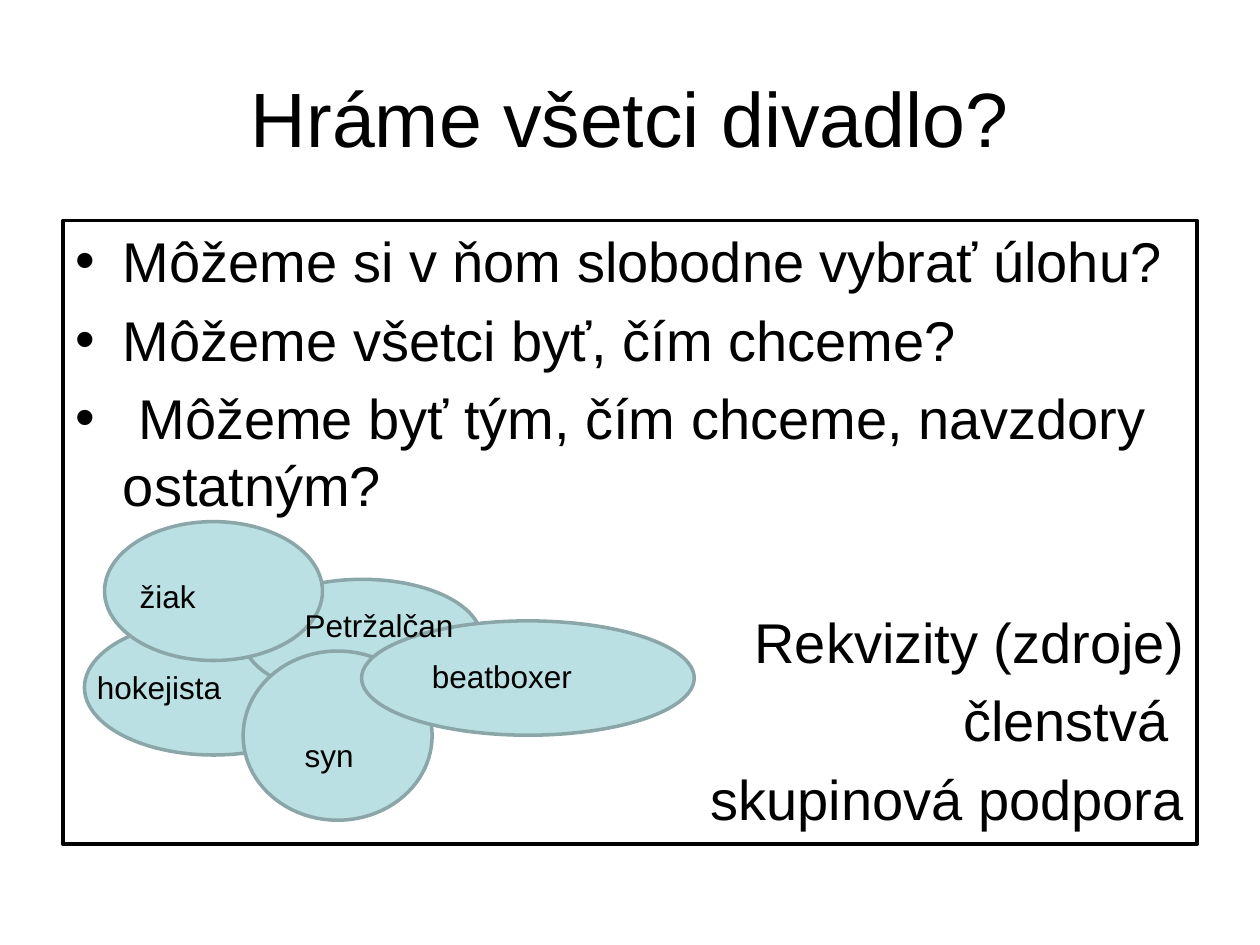
"""Build the slide on theatre roles: questions, overlapping roles and props."""
from lxml import etree
from pptx import Presentation
from pptx.dml.color import RGBColor
from pptx.enum import shapes, text
from pptx.oxml.ns import qn
from pptx.util import Inches, Pt

COLORS = {"ink": "000000", "role": "BBE0E3", "edge": "8AA6A8"}
FONT = "Arial"

prs = Presentation()
prs.slide_width, prs.slide_height = Inches(10), Inches(7.5)
W, H = prs.slide_width, prs.slide_height
s = prs.slides.add_slide(prs.slide_layouts[1])


def place(sp, x, y, w, h):
    sp.left, sp.top, sp.width, sp.height = int(W * x), int(H * y), int(W * w), int(H * h)


def add_run(p, words, size):
    r = p.add_run()
    r.text = words
    r.font.name, r.font.size = FONT, Pt(size)
    r.font.color.rgb = RGBColor.from_string(COLORS["ink"])


title, body = s.placeholders[0], s.placeholders[1]
place(title, 0.05, 0.04, 0.9, 1 / 6)
title.text_frame.vertical_anchor = text.MSO_ANCHOR.MIDDLE
p = title.text_frame.paragraphs[0]
p.alignment = text.PP_ALIGN.CENTER
add_run(p, "Hráme všetci divadlo?", 44)

place(body, 0.05, 0.7 / 3, 0.9, 0.66)
body.line.color.rgb = RGBColor.from_string(COLORS["ink"])
body.line.width = Pt(2.25)
tf = body.text_frame
tf.auto_size = text.MSO_AUTO_SIZE.NONE

questions = [
    "Môžeme si v ňom slobodne vybrať úlohu?",
    "Môžeme všetci byť, čím chceme?",
    " Môžeme byť tým, čím chceme, navzdory ostatným?",
]
props = ["Rekvizity (zdroje)", "členstvá ", "skupinová podpora"]
for i, line in enumerate(questions + props):
    p = tf.add_paragraph() if i else tf.paragraphs[0]
    add_run(p, line, 32)
    if line in props:
        p.alignment = text.PP_ALIGN.RIGHT
        if line == props[0]:
            p.space_before = Pt(51)
        pPr = p._p.get_or_add_pPr()
        pPr.set("marL", "0")
        pPr.set("indent", "0")
        etree.SubElement(pPr, qn("a:buNone"))

ovals = [
    (0.067, 0.656, 0.205, 0.143),
    (0.193, 0.613, 0.189, 0.125),
    (0.193, 0.689, 0.15, 0.179),
    (0.287, 0.657, 0.264, 0.121),
    (0.083, 0.552, 0.173, 0.147),
]
for box in ovals:
    sp = s.shapes.add_shape(shapes.MSO_SHAPE.OVAL, 0, 0, 0, 0)
    place(sp, *box)
    sp.shadow.inherit = False
    sp.fill.solid()
    sp.fill.fore_color.rgb = RGBColor.from_string(COLORS["role"])
    sp.line.color.rgb = RGBColor.from_string(COLORS["edge"])
    sp.line.width = Pt(2)

roles = [
    ("žiak", 0.101, 0.604, 0.173),
    ("syn", 0.232, 0.772, 0.079),
    ("Petržalčan", 0.232, 0.635, 0.157),
    ("hokejista", 0.067, 0.7, 0.134),
    ("beatboxer", 0.333, 0.689, 0.173),
]
for role, x, y, w in roles:
    sp = s.shapes.add_textbox(0, 0, 0, 0)
    place(sp, x, y, w, 0.053)
    sp.text_frame.word_wrap = True
    sp.text_frame.auto_size = text.MSO_AUTO_SIZE.SHAPE_TO_FIT_TEXT
    add_run(sp.text_frame.paragraphs[0], role, 18)

prs.save("out.pptx")
